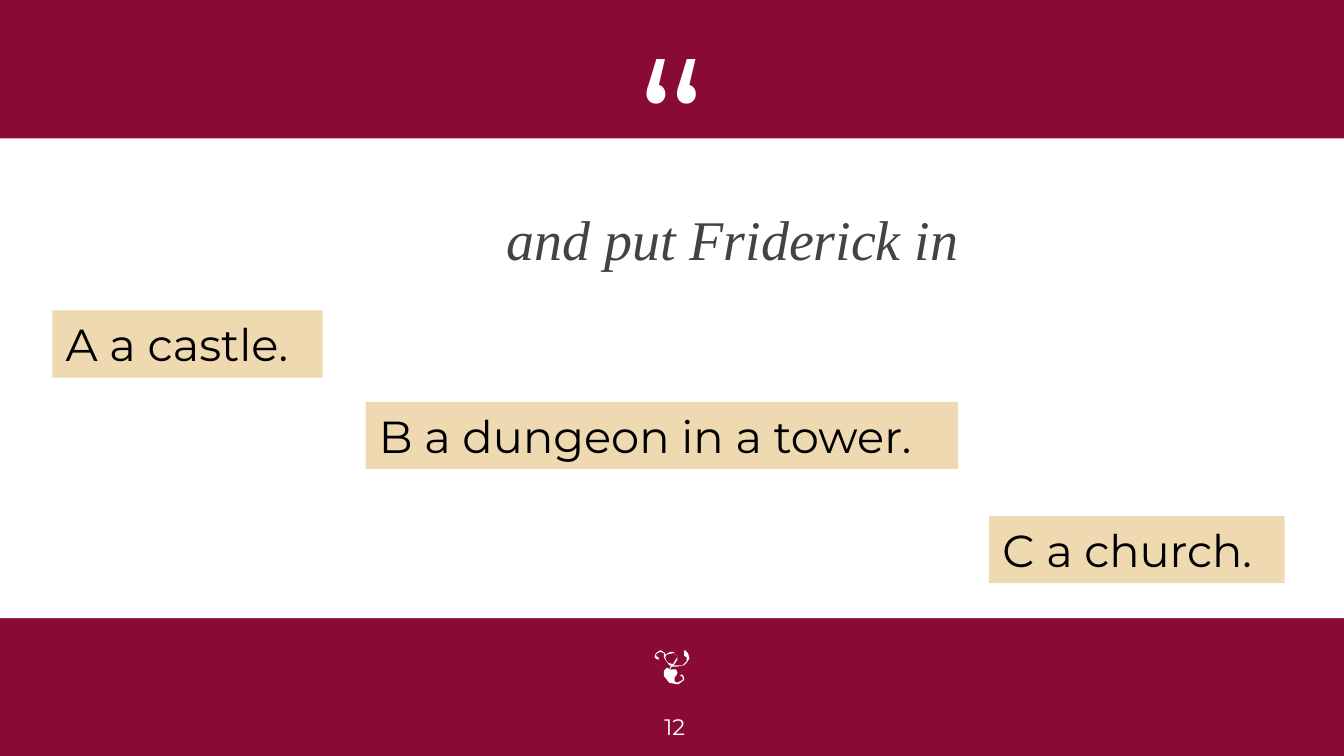
from dataclasses import dataclass

from pptx import Presentation
from pptx import util as u
from pptx.dml.color import RGBColor
from pptx.enum import shapes, text

CELL = u.Inches(0.1)  # the slide is a grid of 100 columns by 56.25 rows
COLS, ROWS = 100, 56.25


@dataclass(frozen=True)
class Theme:
    wine: str = "8A0A36"
    white: str = "FFFFFF"
    sand: str = "EFD9B0"
    grey: str = "434343"
    black: str = "000000"
    sans: str = "Montserrat"
    serif: str = "Times New Roman"
    quote: int = 96
    lead: int = 30
    choice: int = 24
    page: int = 12


@dataclass(frozen=True)
class Box:
    col: float
    row: float
    cols: float
    rows: float

    def place(self) -> tuple[int, ...]:
        return tuple(round(n * CELL) for n in (self.col, self.row, self.cols, self.rows))


@dataclass(frozen=True)
class Choice:
    words: str
    box: Box


THEME = Theme()
PANEL = Box(0, 10.3, COLS, 35.7)
QUOTE = Box(39.3, 0, 21.4, PANEL.row)
LEAD = Box(17.2, 13.2, 74.6, 9)
PAGE = Box(0.4, 51.9, 99.6, 4.3)
CHOICES = (
    Choice("A a castle.", Box(3.9, 23.1, 20.1, 5)),
    Choice("B a dungeon in a tower.", Box(27.2, 29.9, 44.1, 5)),
    Choice("C a church.", Box(73.6, 38.4, 22, 5)),
)

# Leaf ornament: outline points in tenths of a cell from its corner
LEAF_COL, LEAF_ROW = 48.7, 48.3
LEAF = (
    (17, 13), (14, 13), (13, 13), (12, 14), (12, 16), (13, 15), (16, 15), (17, 17),
    (17, 18), (16, 20), (15, 21), (15, 23), (15, 24), (17, 25), (21, 23), (21, 21),
    (20, 20), (19, 20), (20, 19), (21, 19), (22, 21), (22, 23), (18, 26), (16, 26),
    (11, 25), (7, 20), (7, 16), (9, 14), (10, 14), (11, 15), (12, 13), (12, 12),
    (11, 12), (8, 8), (7, 6), (7, 3), (4, 2), (1, 4), (2, 6), (3, 6), (3, 8),
    (1, 7), (0, 6), (1, 3), (4, 1), (5, 1), (8, 3), (8, 4), (12, 2), (14, 2),
    (17, 5), (17, 8), (15, 11), (14, 12), (17, 12), (21, 12), (24, 9), (24, 6),
    (22, 5), (22, 1), (21, 1), (23, 1), (25, 3), (26, 7), (24, 10), (22, 12),
)
LOOP = (
    (17, 6), (17, 5), (15, 3), (14, 3), (9, 4), (8, 6),
    (9, 9), (10, 10), (13, 11), (14, 11), (15, 9),
)


def paint(shape, color: str) -> None:
    shape.shadow.inherit = False
    shape.fill.solid()
    shape.fill.fore_color.rgb = RGBColor.from_string(color)
    shape.line.fill.background()


def write(shape, words: str, *, size: int, color: str, font: str = THEME.sans,
          align=text.PP_ALIGN.CENTER, anchor=text.MSO_ANCHOR.TOP,
          pad: float = 0.1, fit=text.MSO_AUTO_SIZE.NONE,
          italic: bool = False, before: int = 0) -> None:
    frame = shape.text_frame
    frame.word_wrap = True
    frame.auto_size = fit
    frame.vertical_anchor = anchor
    frame.margin_left = frame.margin_right = u.Inches(0.1)
    frame.margin_top = frame.margin_bottom = u.Inches(pad)
    par = frame.paragraphs[0]
    par.alignment = align
    par.space_before = u.Pt(before)
    run = par.add_run()
    run.text = words
    run.font.name = font
    run.font.size = u.Pt(size)
    run.font.italic = italic
    run.font.color.rgb = RGBColor.from_string(color)


def block(slide, box: Box, color: str):
    shape = slide.shapes.add_shape(shapes.MSO_SHAPE.RECTANGLE, *box.place())
    paint(shape, color)
    return shape


def leaf(slide) -> None:
    pen = slide.shapes.build_freeform(*LEAF[0], scale=CELL / 10)
    pen.add_line_segments(LEAF[1:], close=True)
    pen.move_to(*LOOP[0])
    pen.add_line_segments(LOOP[1:], close=True)
    shape = pen.convert_to_shape(round(LEAF_COL * CELL), round(LEAF_ROW * CELL))
    paint(shape, THEME.white)


def main() -> None:
    deck = Presentation()
    deck.slide_width, deck.slide_height = COLS * CELL, round(ROWS * CELL)
    slide = deck.slides.add_slide(deck.slide_layouts[5])
    slide.background.fill.solid()
    slide.background.fill.fore_color.rgb = RGBColor.from_string(THEME.wine)

    panel = block(slide, PANEL, THEME.white)
    title = slide.shapes.title
    panel.element.addnext(title.element)  # keep the title above the panel
    title.left, title.top, title.width, title.height = LEAD.place()
    write(title, "and put Friderick in", size=THEME.lead, color=THEME.grey,
          font=THEME.serif, italic=True, before=6, anchor=text.MSO_ANCHOR.MIDDLE)

    write(slide.shapes.add_textbox(*QUOTE.place()), "“",
          size=THEME.quote, color=THEME.white)
    write(slide.shapes.add_textbox(*PAGE.place()), "12", size=THEME.page,
          color=THEME.white, anchor=text.MSO_ANCHOR.MIDDLE)
    leaf(slide)
    for choice in CHOICES:
        write(block(slide, choice.box, THEME.sand), choice.words,
              size=THEME.choice, color=THEME.black, pad=0.05,
              align=text.PP_ALIGN.LEFT, fit=text.MSO_AUTO_SIZE.SHAPE_TO_FIT_TEXT)
    deck.save("out.pptx")


if __name__ == "__main__":
    main()
